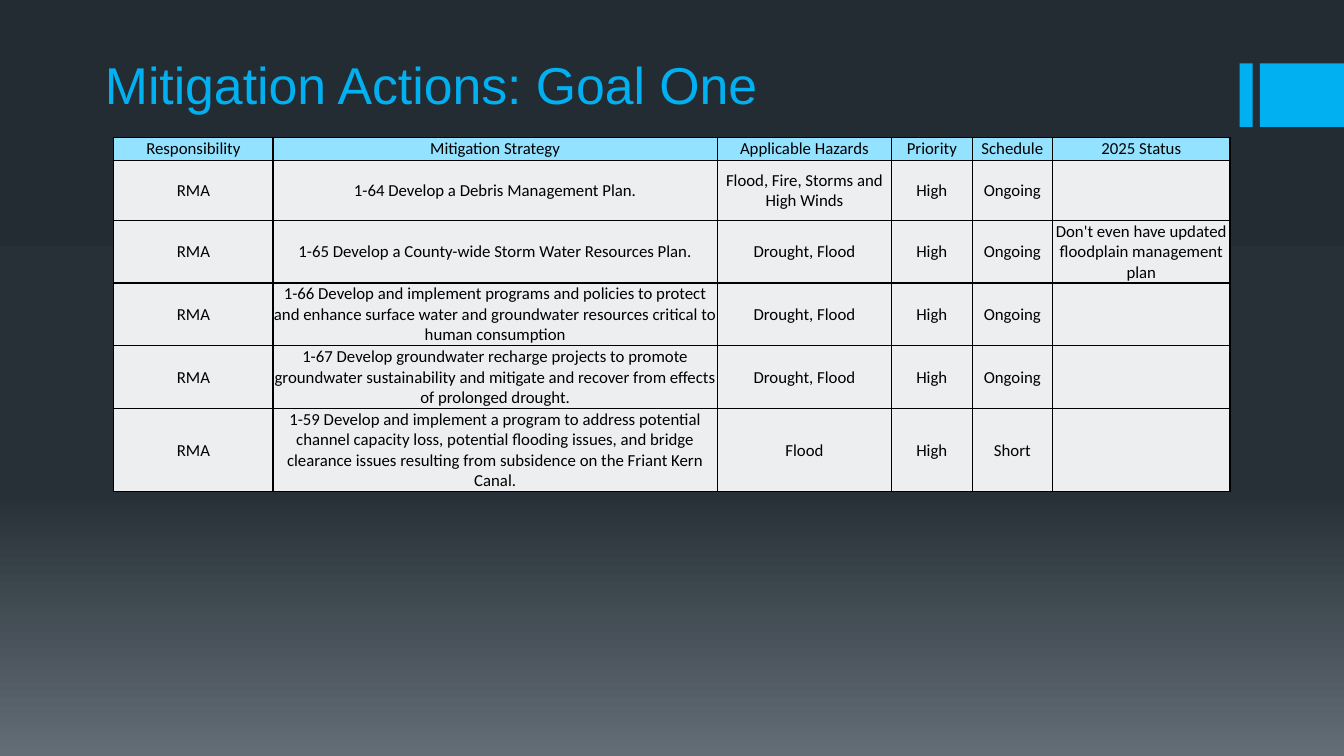
from copy import deepcopy

from lxml import etree
from pptx import Presentation
from pptx.dml.color import RGBColor
from pptx.enum import shapes, text
from pptx.oxml.ns import qn
from pptx.util import Cm, Pt

BLUE = RGBColor(0x00, 0xB0, 0xF0)
SKY = RGBColor(0x93, 0xE2, 0xFF)
PALE = RGBColor(0xED, 0xEE, 0xEF)
BLACK = RGBColor(0, 0, 0)
STOPS = [
    (0, RGBColor(0x24, 0x2C, 0x33)),
    (0.65, RGBColor(0x27, 0x30, 0x37)),
    (1, RGBColor(0x63, 0x6D, 0x76)),
]

COLS = [4.01, 11.2, 4.39, 2.03, 2.03, 4.47]
ROWS = [0.58, 1.5, 1.58, 1.58, 1.58, 2.1]
DATA = [
    ["Responsibility", "Mitigation Strategy", "Applicable Hazards",
     "Priority", "Schedule", "2025 Status"],
    ["RMA", "1-64 Develop a Debris Management Plan.",
     "Flood, Fire, Storms and High Winds", "High", "Ongoing", ""],
    ["RMA", "1-65 Develop a County-wide Storm Water Resources Plan.",
     "Drought, Flood", "High", "Ongoing",
     "Don't even have updated floodplain management plan"],
    ["RMA", "1-66 Develop and implement programs and policies to protect and "
     "enhance surface water and groundwater resources critical to human "
     "consumption", "Drought, Flood", "High", "Ongoing", ""],
    ["RMA", "1-67 Develop groundwater recharge projects to promote "
     "groundwater sustainability and mitigate and recover from effects of "
     "prolonged drought.", "Drought, Flood", "High", "Ongoing", ""],
    ["RMA", "1-59 Develop and implement a program to address potential "
     "channel capacity loss, potential flooding issues, and bridge clearance "
     "issues resulting from subsidence on the Friant Kern Canal.",
     "Flood", "High", "Short", ""],
]


def add_back(slide):
    fill = slide.background.fill
    fill.gradient()
    fill.gradient_angle = 270
    stops = slide.element.find(".//" + qn("a:gsLst"))
    stops.append(deepcopy(stops[0]))
    for stop, (pos, color) in zip(fill.gradient_stops, STOPS):
        stop.position = pos
        stop.color.rgb = color


def add_bars(slide, left, top, width, height):
    # A thin bar, a gap, then a block that runs to the right edge
    thin, gap = 0.33, 0.18
    start = thin + gap
    for x, w in [(left, thin), (left + start, width - start)]:
        bar = slide.shapes.add_shape(
            shapes.MSO_SHAPE.RECTANGLE, Cm(x), Cm(top), Cm(w), Cm(height))
        bar.shadow.inherit = False
        bar.fill.solid()
        bar.fill.fore_color.rgb = BLUE
        bar.line.fill.background()


def set_title(slide, left, top, width, height):
    title = slide.shapes.title
    title.left, title.top = Cm(left), Cm(top)
    title.width, title.height = Cm(width), Cm(height)
    frame = title.text_frame
    frame.text = "Mitigation Actions: Goal One"
    frame.word_wrap = True
    frame.auto_size = text.MSO_AUTO_SIZE.NONE
    frame.vertical_anchor = text.MSO_ANCHOR.BOTTOM
    para = frame.paragraphs[0]
    para.alignment = text.PP_ALIGN.LEFT
    para.font.name, para.font.size = "Arial", Pt(37)
    para.font.color.rgb = BLUE


def add_edges(cell):
    # Borders come before the fill in the cell properties
    props = cell._tc.get_or_add_tcPr()
    for i, side in enumerate(["lnL", "lnR", "lnT", "lnB"]):
        line = etree.Element(qn("a:" + side), w=str(Pt(1)))
        fill = etree.SubElement(line, qn("a:solidFill"))
        etree.SubElement(fill, qn("a:srgbClr"), val=str(BLACK))
        props.insert(i, line)


def fill_cell(cell, words, color, inset):
    cell.text = words
    cell.fill.solid()
    cell.fill.fore_color.rgb = color
    cell.vertical_anchor = text.MSO_ANCHOR.MIDDLE
    cell.margin_left = cell.margin_right = cell.margin_top = Cm(inset)
    cell.margin_bottom = 0
    para = cell.text_frame.paragraphs[0]
    para.alignment = text.PP_ALIGN.CENTER
    para.font.name, para.font.size = "Calibri", Pt(12)
    para.font.bold = False
    para.font.color.rgb = BLACK
    add_edges(cell)


def add_actions(slide, left, top):
    table = slide.shapes.add_table(
        len(ROWS), len(COLS), Cm(left), Cm(top),
        Cm(sum(COLS)), Cm(sum(ROWS))).table
    for col, width in zip(table.columns, COLS):
        col.width = Cm(width)
    for r, (row, height) in enumerate(zip(table.rows, ROWS)):
        row.height = Cm(height)
        color, inset = (PALE, 0.02) if r else (SKY, 0)
        for cell, words in zip(row.cells, DATA[r]):
            fill_cell(cell, words, color, inset)


def main():
    deck = Presentation()
    deck.slide_width, deck.slide_height = Cm(33.87), Cm(19.05)
    slide = deck.slides.add_slide(deck.slide_layouts[5])
    add_back(slide)
    add_bars(slide, 31.24, 1.6, 2.63, 1.6)
    add_actions(slide, 2.87, 3.47)
    set_title(slide, 2.39, 1.42, 27.1, 1.6)
    deck.save("out.pptx")


if __name__ == "__main__":
    main()
